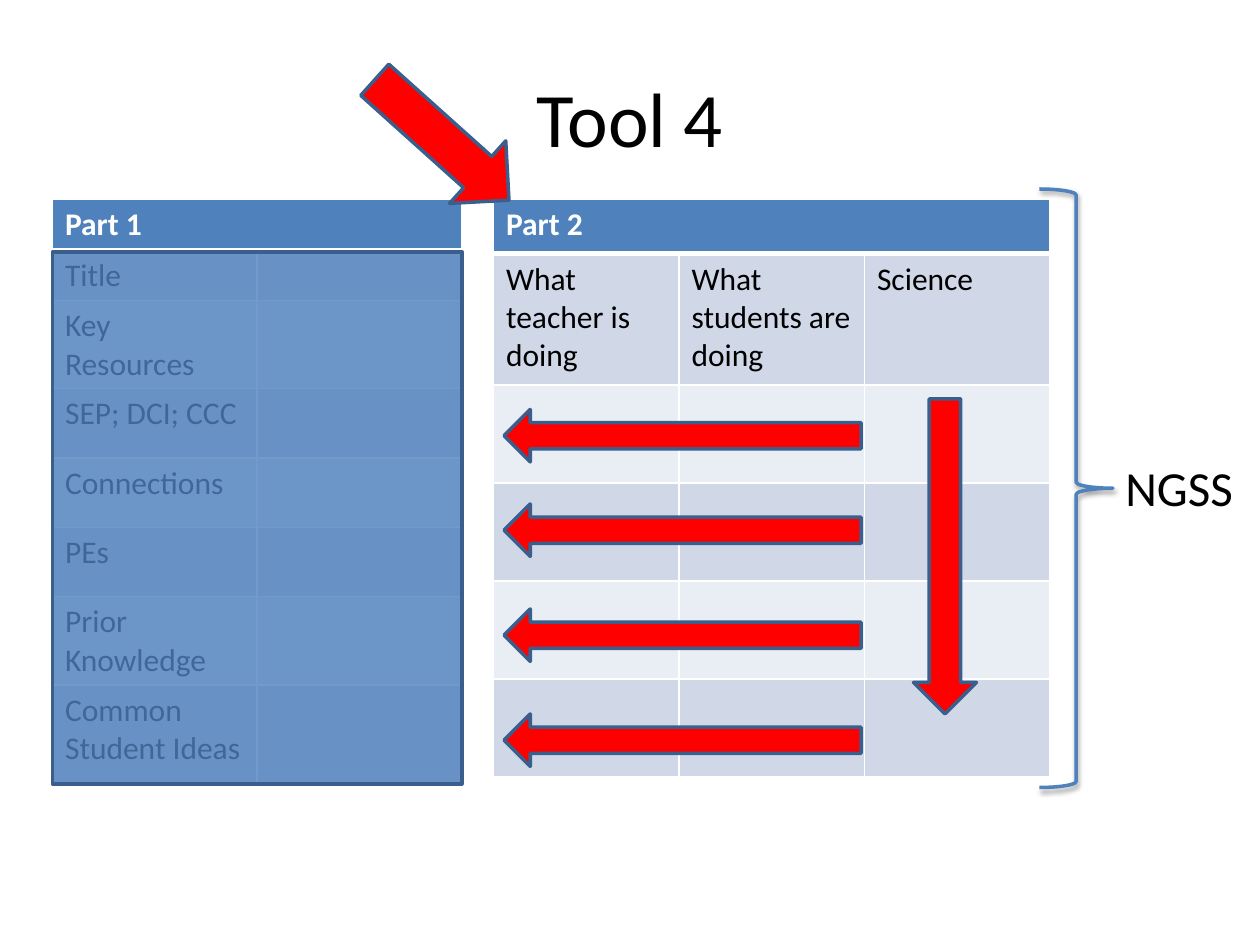
from dataclasses import dataclass
from lxml import etree
from pptx import Presentation
from pptx import util as u
from pptx.dml import color
from pptx.enum import shapes, text
from pptx.oxml import ns

Pt = u.Pt
Kind = shapes.MSO_SHAPE


@dataclass(frozen=True)
class Theme:
    font: str = "Calibri"
    blue: str = "4F81BD"
    edge: str = "3A5F8C"
    red: str = "FF0000"
    dark: str = "D0D8E8"
    light: str = "E9EDF4"
    white: str = "FFFFFF"
    black: str = "000000"
    head: int = 44
    label: int = 28
    body: int = 18


THEME = Theme()
HEADS = ["What teacher is doing", "What students are doing", "Science"]
TOPICS = ["Title", "Key Resources", "SEP; DCI; CCC", "Connections", "PEs",
          "Prior Knowledge", "Common Student Ideas"]


def rgb(code):
    return color.RGBColor.from_string(code)


def sub(node, tag, **attrs):
    return etree.SubElement(node, ns.qn(tag), attrs)


def style(para, size, tint, bold=False):
    form = {"name": THEME.font, "size": Pt(size), "bold": bold}
    for key, val in form.items():
        setattr(para.font, key, val)
    para.font.color.rgb = rgb(tint)


def add_text(slide, box, words, size, **form):
    frame = slide.shapes.add_textbox(*map(Pt, box)).text_frame
    frame.word_wrap = True
    for key, val in form.items():
        setattr(frame, key, val)
    para = frame.paragraphs[0]
    para.text = words
    style(para, size, THEME.black)
    return para


def add_form(slide, kind, box, fill=None, line=THEME.edge, turn=0):
    form = slide.shapes.add_shape(kind, *map(Pt, box))
    form.shadow.inherit = False
    form.rotation = turn
    if fill:
        form.fill.solid()
        form.fill.fore_color.rgb = rgb(fill)
    else:
        form.fill.background()
    form.line.color.rgb = rgb(line)
    form.line.width = Pt(2)
    return form


def fade(form, share):
    """Make the fill opaque by the given percentage only."""
    tint = form.fill._xPr.find(".//" + ns.qn("a:srgbClr"))
    sub(tint, "a:alpha", val=str(share * 1000))


def shade(form):
    """Cast a soft shadow straight down."""
    fx = form._element.spPr.find(ns.qn("a:effectLst"))
    drop = sub(fx, "a:outerShdw", blurRad=str(Pt(3.1)), dist=str(Pt(1.6)),
               dir="5400000", rotWithShape="0")
    tint = sub(drop, "a:srgbClr", val=THEME.black)
    sub(tint, "a:alpha", val="38000")


def rule(cell, base):
    """Draw white borders, the bottom one as wide as base."""
    props = cell._tc.get_or_add_tcPr()
    for spot, side in enumerate("LRTB"):
        width = base if side == "B" else 1
        line = etree.Element(ns.qn("a:ln" + side), w=str(Pt(width)))
        sub(sub(line, "a:solidFill"), "a:srgbClr", val=THEME.white)
        props.insert(spot, line)


def add_grid(slide, box, title, rows, highs):
    """Add a table with one merged title row above banded rows."""
    count = len(rows[0])
    frame = slide.shapes.add_table(len(highs), count, *map(Pt, box))
    grid = frame.table
    for col in grid.columns:
        col.width = Pt(box[2] / count)
    for row, high in zip(grid.rows, highs):
        row.height = Pt(high)
    for r, words in enumerate([[title] + [""] * (count - 1)] + rows):
        top = r == 0
        fill = THEME.blue if top else THEME.dark if r % 2 else THEME.light
        for c, word in enumerate(words):
            cell = grid.cell(r, c)
            cell.text = word
            style(cell.text_frame.paragraphs[0], THEME.body,
                  THEME.white if top else THEME.black, top)
            cell.fill.solid()
            cell.fill.fore_color.rgb = rgb(fill)
            rule(cell, 3 if top else 1)
    grid.cell(0, 0).merge(grid.cell(0, count - 1))
    frame.height = Pt(box[3])


def main():
    deck = Presentation()
    deck.slide_width, deck.slide_height = Pt(720), Pt(540)
    slide = deck.slides.add_slide(deck.slide_layouts[6])

    title = add_text(slide, (36, 21.6, 648, 90), "Tool 4", THEME.head,
                     vertical_anchor=text.MSO_ANCHOR.MIDDLE)
    title.alignment = text.PP_ALIGN.CENTER

    add_grid(slide, (282, 114, 318, 330), "Part 2",
             [HEADS] + [[""] * 3 for _ in range(4)], [31, 75] + [56] * 4)
    add_grid(slide, (30, 114, 234, 334), "Part 1",
             [[topic, ""] for topic in TOPICS], [23, 23] + [39.6] * 5 + [57])

    for top in (234, 288, 348, 408):
        add_form(slide, Kind.LEFT_ARROW, (288, top, 204, 30), THEME.red)
    add_form(slide, Kind.DOWN_ARROW, (522, 228, 36, 180), THEME.red)

    brace = add_form(slide, Kind.RIGHT_BRACE, (594, 108, 42, 342),
                     line=THEME.blue)
    shade(brace)
    add_text(slide, (636, 258, 78, 41), "NGSS", THEME.label)

    cover = add_form(slide, Kind.RECTANGLE, (30, 144, 234, 304), THEME.blue)
    fade(cover, 80)
    add_form(slide, Kind.RIGHT_ARROW, (201, 56, 103, 48), THEME.red,
             turn=41.9)
    deck.save("out.pptx")


if __name__ == "__main__":
    main()
